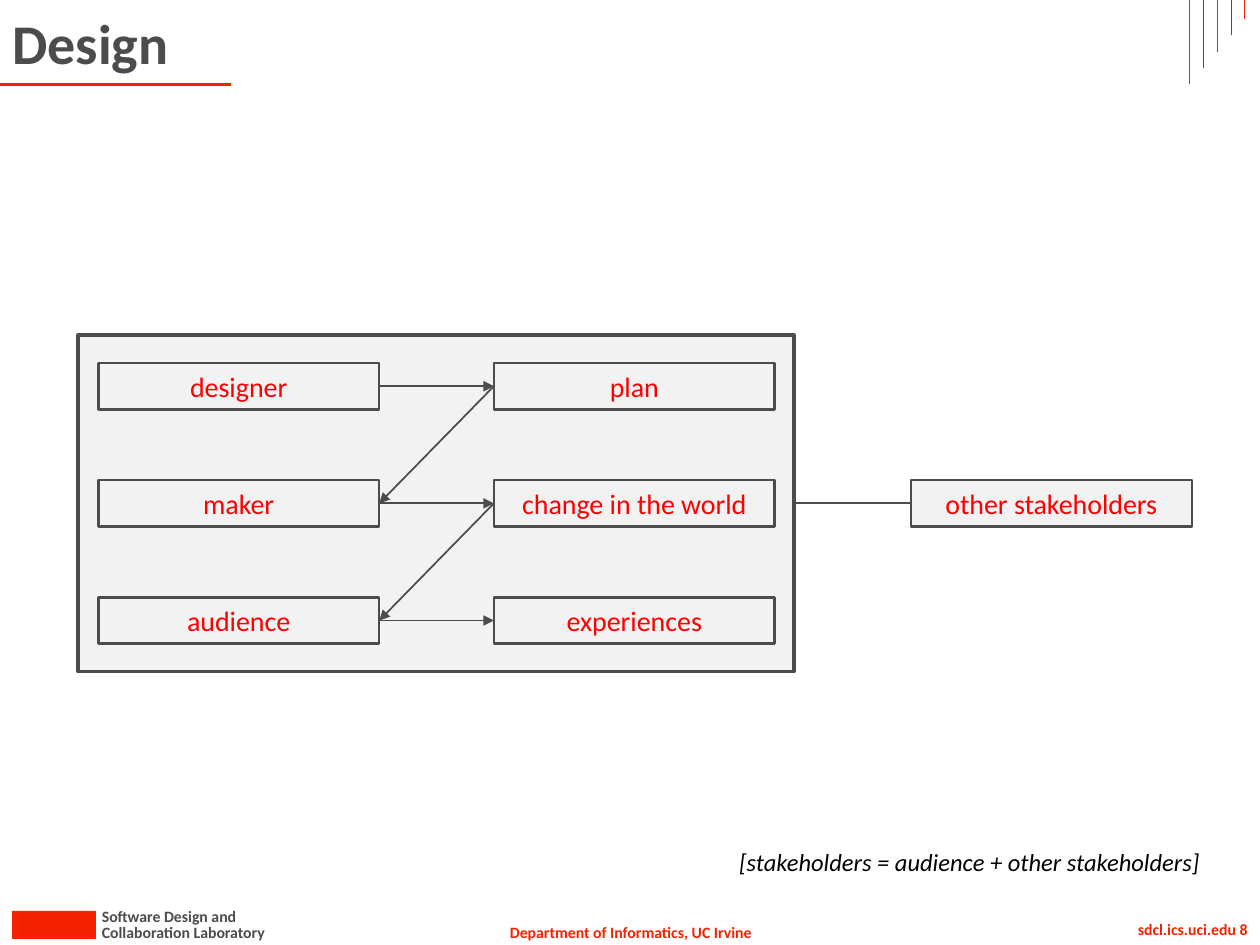
from pptx import Presentation
from pptx.dml.color import RGBColor
from pptx.enum import shapes, text
from pptx.oxml import ns
from pptx.util import Inches, Pt
from lxml import etree

RED, GREY, PALE = "F32200", "4C4C4C", "F2F2F2"
LEFT, CENTER, RIGHT = text.PP_ALIGN.LEFT, text.PP_ALIGN.CENTER, text.PP_ALIGN.RIGHT

# words, (left, top, width, height), alignment, wrap, colour, font format
SMALL = {"size": Pt(9), "bold": True}
LABELS = [
    ("Department of Informatics, UC Irvine", (3.93, 7.27, 2.15, 0.25), CENTER, False, RED, SMALL),
    ("Collaboration Laboratory", (0.71, 7.27, 1.53, 0.25), LEFT, False, GREY, SMALL),
    ("Software Design and", (0.71, 7.15, 1.29, 0.25), LEFT, False, GREY, SMALL),
    ("sdcl.ics.uci.edu 8", (7.84, 7.25, 2.16, 0.25), RIGHT, True, RED, SMALL),
    ("Design", (0, 0, 9, 0.67), LEFT, True, GREY, {"size": Pt(32), "bold": True}),
    ("[stakeholders = audience + other stakeholders]", (5.75, 6.67, 3.89, 0.34),
     CENTER, False, "000000", {"size": Pt(14), "italic": True}),
]
STAGES = [
    ("designer", "plan"),
    ("maker", "change in the world"),
    ("audience", "experiences"),
]
OUTSIDERS = "other stakeholders"

FOOTER_BLOCK = (0.1, 7.23, 0.66, 0.22)
PANEL = (0.62, 2.66, 5.68, 2.67)
ACTOR_LEFT, RESULT_LEFT, OUTSIDER_LEFT = 0.78, 3.92, 7.23
FIRST_TOP, ROW_STEP = 2.88, 0.93
BOX_WIDTH, BOX_HEIGHT = 2.23, 0.37
BAR_LEFT, BAR_STEP, BAR_HEIGHT, BAR_DROP, BAR_COUNT = 9.44, 0.11, 0.67, 0.13, 5
LEFT_SIDE, RIGHT_SIDE = 1, 3


def color(hex_value):
    return RGBColor.from_string(hex_value)


def write(shape, words, align, hex_value, font_format):
    frame = shape.text_frame
    frame.vertical_anchor = text.MSO_ANCHOR.MIDDLE
    para = frame.paragraphs[0]
    para.alignment = align
    span = para.add_run()
    span.text = words
    span.font.name = "Calibri"
    span.font.color.rgb = color(hex_value)
    for name, value in font_format.items():
        setattr(span.font, name, value)


def add_label(page, words, place, align, wrap, hex_value, font_format):
    label = page.shapes.add_textbox(*map(Inches, place))
    label.text_frame.word_wrap = wrap
    write(label, words, align, hex_value, font_format)


def add_box(page, place, line_width, words=None, fill=PALE, outline=GREY):
    box = page.shapes.add_shape(shapes.MSO_SHAPE.RECTANGLE, *map(Inches, place))
    box.shadow.inherit = False
    box.fill.solid()
    box.fill.fore_color.rgb = color(fill)
    box.line.color.rgb = color(outline)
    box.line.width = Pt(line_width)
    if words:
        box.text_frame.word_wrap = True
        write(box, words, CENTER, "FF0000", {"size": Pt(16)})
    return box


def add_line(page, start, end, hex_value, width):
    line = page.shapes.add_connector(
        shapes.MSO_CONNECTOR.STRAIGHT, *map(Inches, start + end))
    line.line.color.rgb = color(hex_value)
    line.line.width = Pt(width)
    etree.SubElement(line._element.spPr, ns.qn("a:effectLst"))
    return line


def join(page, source, source_side, target, target_side, arrow=True):
    """Connect two rectangles, with an arrowhead at the target if asked."""
    line = add_line(page, (0, 0), (1, 1), GREY, 1)
    line.begin_connect(source, source_side)
    line.end_connect(target, target_side)
    if arrow:
        outline = line.line._get_or_add_ln()
        etree.SubElement(outline, ns.qn("a:tailEnd"), type="triangle")


def add_stage_box(page, left, row, words):
    top = FIRST_TOP + row * ROW_STEP
    return add_box(page, (left, top, BOX_WIDTH, BOX_HEIGHT), 1.5, words)


def add_decoration(page):
    add_box(page, FOOTER_BLOCK, 0.5, fill=RED, outline=RED)
    add_line(page, (0, 0.67), (1.83, 0.67), RED, 1.5)
    for i in range(BAR_COUNT):
        x = BAR_LEFT + i * BAR_STEP
        bottom = BAR_HEIGHT - i * BAR_DROP
        add_line(page, (x, bottom), (x, 0), (RED, GREY)[i % 2], 0.5)


def add_diagram(page):
    panel = add_box(page, PANEL, 2)
    previous_result = None
    for row, (actor_words, result_words) in enumerate(STAGES):
        actor = add_stage_box(page, ACTOR_LEFT, row, actor_words)
        result = add_stage_box(page, RESULT_LEFT, row, result_words)
        join(page, actor, RIGHT_SIDE, result, LEFT_SIDE)
        if previous_result is not None:
            join(page, previous_result, LEFT_SIDE, actor, RIGHT_SIDE)
        previous_result = result
    outsiders = add_stage_box(page, OUTSIDER_LEFT, 1, OUTSIDERS)
    join(page, panel, RIGHT_SIDE, outsiders, LEFT_SIDE, arrow=False)


def main():
    deck = Presentation()
    deck.slide_width, deck.slide_height = Inches(10), Inches(7.5)
    page = deck.slides.add_slide(deck.slide_layouts[6])
    add_decoration(page)
    add_diagram(page)
    for label in LABELS:
        add_label(page, *label)
    deck.save("out.pptx")


if __name__ == "__main__":
    main()
